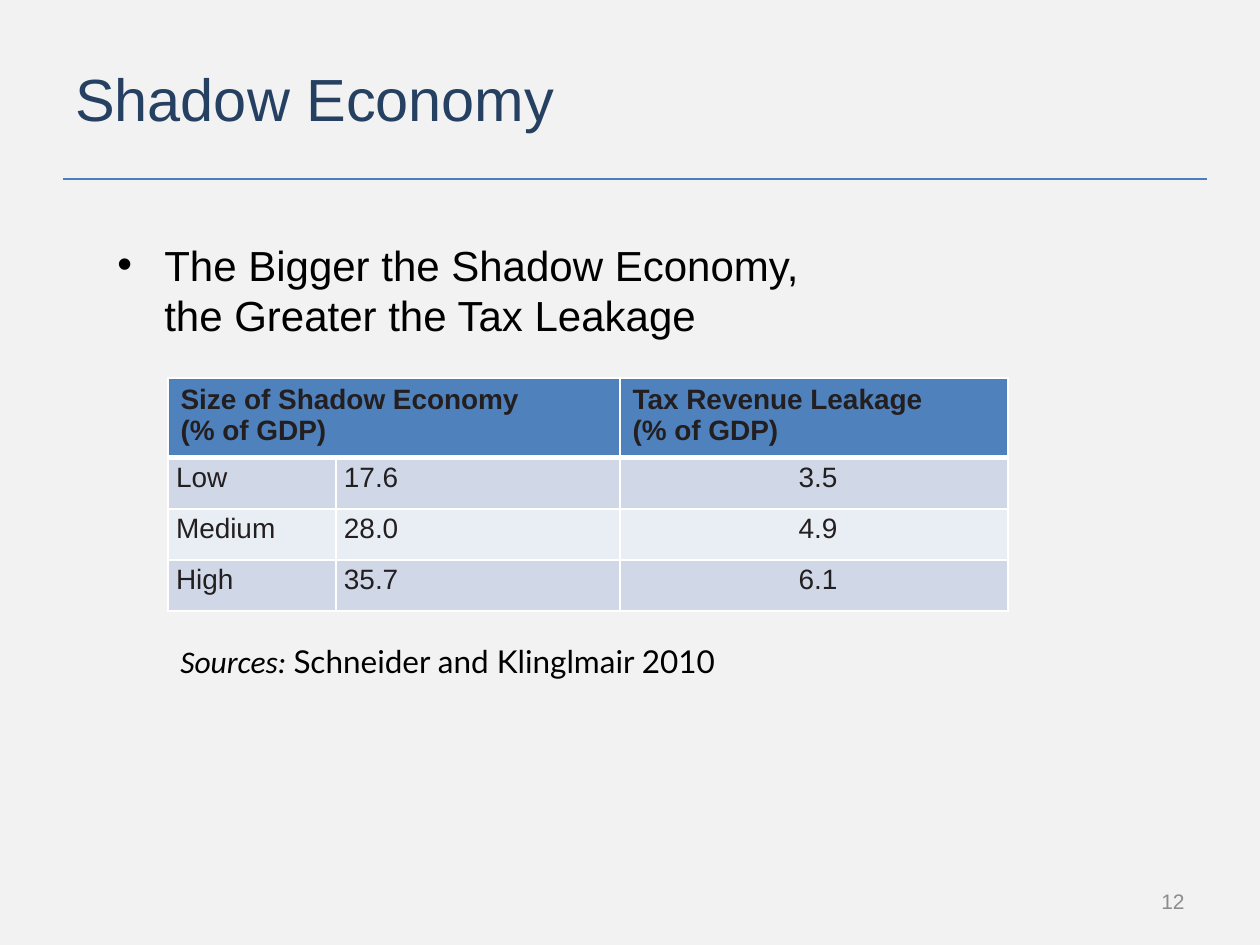
from dataclasses import dataclass

from lxml import etree
from pptx import Presentation
from pptx.dml.color import RGBColor
from pptx.enum.shapes import MSO_CONNECTOR
from pptx.enum.text import MSO_ANCHOR, PP_ALIGN
from pptx.oxml.ns import qn
from pptx.util import Pt

PX = 914400 / 126
LEFT, MID, RIGHT = PP_ALIGN.LEFT, PP_ALIGN.CENTER, PP_ALIGN.RIGHT
TOP, CENTER = MSO_ANCHOR.TOP, MSO_ANCHOR.MIDDLE
STRAIGHT = MSO_CONNECTOR.STRAIGHT
COLORS = {
    "back": "F2F2F2", "rule": "4B7EBC", "title": "254061", "page": "8C8C8C",
    "text": "000000", "cell": "231F20", "head": "4F81BD", "odd": "D0D8E8",
    "even": "E9EDF4", "edge": "FFFFFF",
}


@dataclass
class Box:
    x: int
    y: int
    w: int
    h: int


@dataclass
class Row:
    level: str
    size: str
    leak: str


HEADS = {0: "Size of Shadow Economy\n(% of GDP)", 2: "Tax Revenue Leakage\n(% of GDP)"}
ROWS = [Row("Low", "17.6", "3.5"), Row("Medium", "28.0", "4.9"), Row("High", "35.7", "6.1")]
WIDTHS = [168, 284, 388]
HEAD_H, ROW_H = 75, 51


def emu(px: int) -> int:
    return round(px * PX)


def rgb(name: str) -> RGBColor:
    return RGBColor.from_string(COLORS[name])


def write(para, text: str, *, size: int, color: str = "text", font: str = "Arial",
          bold: bool = False, italic: bool = False, align=LEFT) -> None:
    """Append text to a paragraph; each newline becomes a line break."""
    para.alignment = align
    for i, line in enumerate(text.split("\n")):
        if i:
            para.add_line_break()
        run = para.add_run()
        run.text = line
        face = run.font
        face.name, face.size, face.bold, face.italic = font, Pt(size), bold, italic
        face.color.rgb = rgb(color)


def add_box(slide, box: Box, anchor=TOP):
    """Add a wrapping text box and return its first paragraph."""
    shape = slide.shapes.add_textbox(*map(emu, (box.x, box.y, box.w, box.h)))
    frame = shape.text_frame
    frame.word_wrap = True
    frame.vertical_anchor = anchor
    return frame.paragraphs[0]


def add_rule(slide, x: int, y: int, end: int) -> None:
    line = slide.shapes.add_connector(STRAIGHT, emu(x), emu(y), emu(end), emu(y))
    line.line.color.rgb = rgb("rule")
    line.line.width = Pt(0.75)
    etree.SubElement(line._element.spPr, qn("a:effectLst"))


def add_bullet(para, indent: int) -> None:
    props = para._p.get_or_add_pPr()
    props.set("marL", str(emu(indent)))
    props.set("indent", str(-emu(indent)))
    etree.SubElement(props, qn("a:buFont"), typeface="Arial")
    etree.SubElement(props, qn("a:buChar"), char="•")


def paint(cell, fill: str, base: float = 1) -> None:
    """Fill a cell and draw its borders; base is the bottom width in points."""
    props = cell._tc.get_or_add_tcPr()
    for side, width in (("L", 1), ("R", 1), ("T", 1), ("B", base)):
        edge = etree.SubElement(props, qn(f"a:ln{side}"), w=str(Pt(width)))
        solid = etree.SubElement(edge, qn("a:solidFill"))
        etree.SubElement(solid, qn("a:srgbClr"), val=COLORS["edge"])
    cell.fill.solid()
    cell.fill.fore_color.rgb = rgb(fill)


def add_grid(slide, x: int, y: int) -> None:
    heights = [HEAD_H] + [ROW_H] * len(ROWS)
    area = map(emu, (x, y, sum(WIDTHS), sum(heights)))
    grid = slide.shapes.add_table(len(heights), len(WIDTHS), *area).table
    for col, width in zip(grid.columns, WIDTHS):
        col.width = emu(width)
    for row, height in zip(grid.rows, heights):
        row.height = emu(height)

    grid.cell(0, 0).merge(grid.cell(0, 1))
    for c in range(len(WIDTHS)):
        cell = grid.cell(0, c)
        paint(cell, "head", 3)
        if c in HEADS:
            write(cell.text_frame.paragraphs[0], HEADS[c], size=16, color="cell", bold=True)

    for r, row in enumerate(ROWS, 1):
        for c, text in enumerate((row.level, row.size, row.leak)):
            cell = grid.cell(r, c)
            paint(cell, "odd" if r % 2 else "even")
            cell.margin_left = cell.margin_right = cell.margin_top = cell.margin_bottom = 0
            para = cell.text_frame.paragraphs[0]
            para.line_spacing = 1.15
            para.space_before = Pt(2.4 if r == 1 else 1.3)
            para._p.get_or_add_pPr().set("marL", str(emu(8)))
            write(para, text, size=16, color="cell", align=MID if c == 2 else LEFT)


def main() -> None:
    deck = Presentation()
    deck.slide_width, deck.slide_height = emu(1260), emu(945)
    slide = deck.slides.add_slide(deck.slide_layouts[6])
    slide.background.fill.solid()
    slide.background.fill.fore_color.rgb = rgb("back")

    add_rule(slide, 63, 179, 1207)
    title = add_box(slide, Box(63, 38, 1134, 120), CENTER)
    write(title, "Shadow Economy", size=34, color="title")
    page = add_box(slide, Box(903, 876, 294, 50), CENTER)
    write(page, "12", size=12, color="page", align=RIGHT)

    point = add_box(slide, Box(105, 233, 1134, 645))
    point.space_before = Pt(4.8)
    add_bullet(point, 47)
    write(point, "The Bigger the Shadow Economy,\nthe Greater the Tax Leakage", size=24)

    add_grid(slide, 168, 378)
    source = add_box(slide, Box(168, 636, 630, 50))
    write(source, "Sources: ", size=18, font="Calibri", italic=True)
    write(source, "Schneider and Klinglmair 2010", size=18, font="Lato")
    deck.save("out.pptx")


if __name__ == "__main__":
    main()
